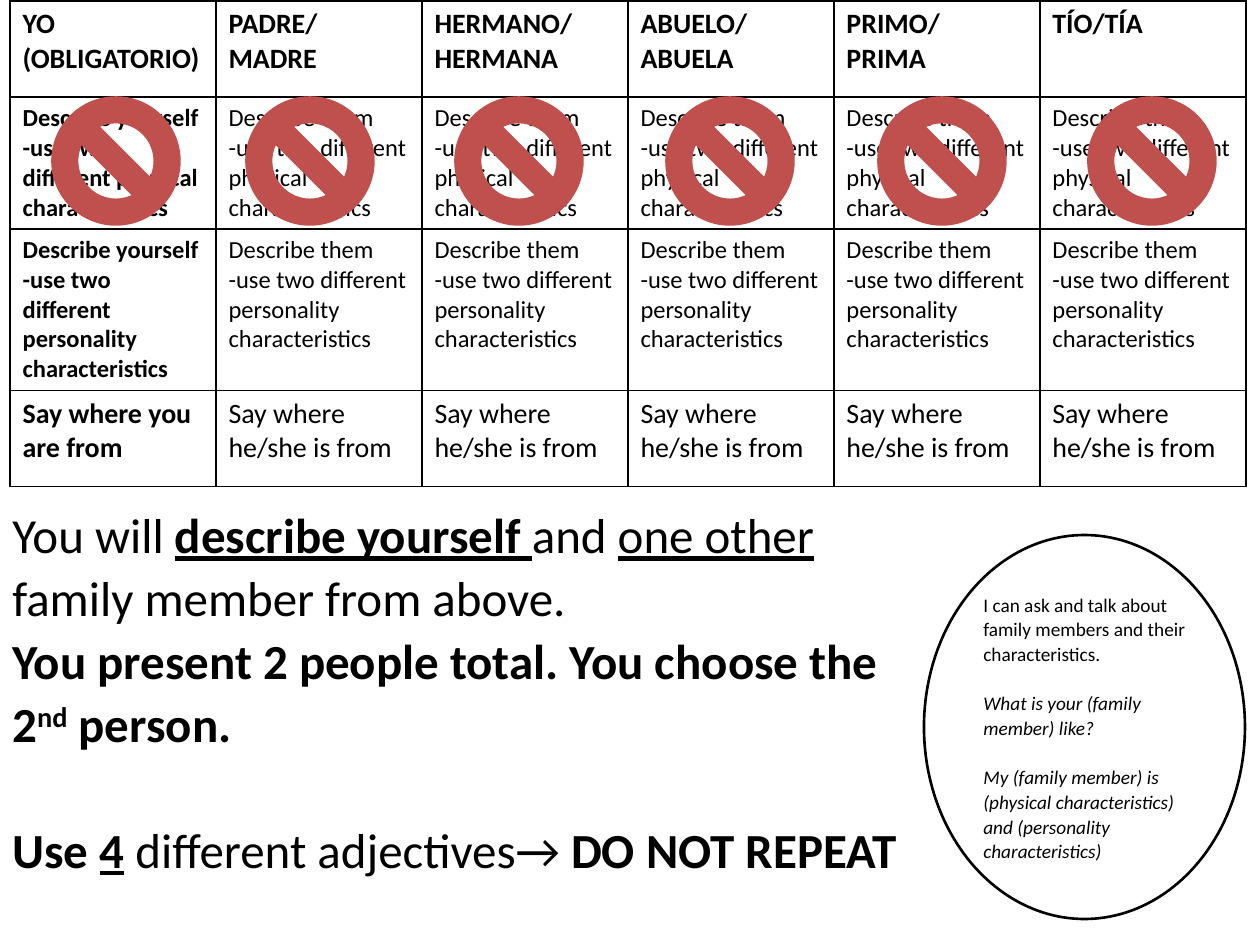
import pptx
import pptx.util
import pptx.dml.color
import pptx.enum.shapes
import pptx.enum.text
import pptx.oxml
import pptx.oxml.ns

SCALE = 914400 // 126
SHAPE = pptx.enum.shapes.MSO_SHAPE
ANCHOR = pptx.enum.text.MSO_ANCHOR
BLACK, WHITE, RED = "000000", "FFFFFF", "C0504D"

HEADS = [["YO", "(OBLIGATORIO)"], ["PADRE/", "MADRE"], ["HERMANO/", "HERMANA"],
         ["ABUELO/", "ABUELA"], ["PRIMO/", "PRIMA"], ["TÍO/TÍA"]]
ROWS = [96, 130, 130, 96]
COL = 206
SIGNS = [53, 247, 456, 667, 879, 1089]

# Each paragraph is a list of (text, format) runs
BOLD = {"bold": True}
LINE = {"underline": True}
BOTH = {"bold": True, "underline": True}
TASK = [
    [("You will ", {}), ("describe yourself ", BOTH), ("and ", {}),
     ("one other ", LINE), ("family member from above.", {})],
    [("You present 2 people total. You choose the 2", BOLD),
     ("nd", {"bold": True, "raise": 30000}), (" person.", BOLD)],
    [("Use ", BOLD), ("4", BOTH), (" ", BOLD),
     ("different adjectives→ ", {}), ("DO NOT REPEAT", BOLD)],
]
GOAL = [
    [("I can ask and talk about family members and their characteristics.", {})],
    [("What is your (family member) like?", {"italic": True})],
    [("My (family member) is (physical characteristics) and "
      "(personality characteristics)", {"italic": True})],
]


def px(*sizes):
    return [size * SCALE for size in sizes]


def color(code):
    return pptx.dml.color.RGBColor.from_string(code)


def write(frame, paras, size, spacing=None, gaps=None):
    """Fill a text frame; gaps maps paragraph index to points before it."""
    frame.word_wrap = True
    for i, runs in enumerate(paras):
        para = frame.paragraphs[0] if i == 0 else frame.add_paragraph()
        para.alignment = pptx.enum.text.PP_ALIGN.LEFT
        if spacing:
            para.line_spacing = spacing
        if gaps and i in gaps:
            para.space_before = pptx.util.Pt(gaps[i])
        for text, style in runs:
            run = para.add_run()
            run.text = text
            run.font.color.rgb = color(BLACK)
            looks = {"name": "Calibri", "size": pptx.util.Pt(size), "bold": False}
            looks.update(style)
            lift = looks.pop("raise", None)
            for key, value in looks.items():
                setattr(run.font, key, value)
            if lift:
                run.font._element.set("baseline", str(lift))


def border(cell):
    props = cell._tc.get_or_add_tcPr()
    for i, side in enumerate(("lnL", "lnR", "lnT", "lnB")):
        props.insert(i, pptx.oxml.parse_xml(
            f'<a:{side} {pptx.oxml.ns.nsdecls("a")} w="12700"><a:solidFill>'
            f'<a:srgbClr val="{BLACK}"/></a:solidFill></a:{side}>'))


def lines(row, col):
    """Return the lines of one table cell."""
    if row == 0:
        return HEADS[col]
    if row == 3:
        return [f"Say where {'he/she is' if col else 'you are'} from"]
    who = "Describe " + ("them" if col else "yourself")
    if row == 1:
        return [who, "-use two different physical characteristics"]
    return [who, "-use two different personality", "characteristics"]


def grid(slide):
    table = slide.shapes.add_table(
        len(ROWS), len(HEADS), *px(10, 1, COL * len(HEADS), sum(ROWS))).table
    table.first_row = table.horz_banding = False
    for col in table.columns:
        col.width = COL * SCALE
    for r, high in enumerate(ROWS):
        table.rows[r].height = high * SCALE
        for c in range(len(HEADS)):
            cell = table.cell(r, c)
            cell.fill.background()
            border(cell)
            style = {"bold": r == 0 or c == 0}
            write(cell.text_frame, [[(text, style)] for text in lines(r, c)],
                  14 if r in (1, 2) else 16)


def shape(slide, kind, box, fill, line, width):
    item = slide.shapes.add_shape(kind, *px(*box))
    item.shadow.inherit = False
    item.fill.solid()
    item.fill.fore_color.rgb = color(fill)
    item.line.color.rgb = color(line)
    item.line.width = pptx.util.Pt(width)
    return item


def main():
    deck = pptx.Presentation()
    deck.slide_width, deck.slide_height = px(1260, 945)
    slide = deck.slides.add_slide(deck.slide_layouts[6])

    # Family table
    grid(slide)

    # Learning goal
    oval = shape(slide, SHAPE.OVAL, (924, 535, 321, 384), WHITE, BLACK, 1.5)
    oval.text_frame.vertical_anchor = ANCHOR.MIDDLE
    write(oval.text_frame, GOAL, 11, 1.07, {1: 14, 2: 14})

    # Task
    task = slide.shapes.add_textbox(*px(0, 494, 935, 432))
    write(task.text_frame, TASK, 28, 1.07, {2: 36})

    # Signs over the physical row
    for left in SIGNS:
        shape(slide, SHAPE.NO_SYMBOL, (left, 98, 126, 126), RED, RED, 2)

    deck.save("out.pptx")


if __name__ == "__main__":
    main()
